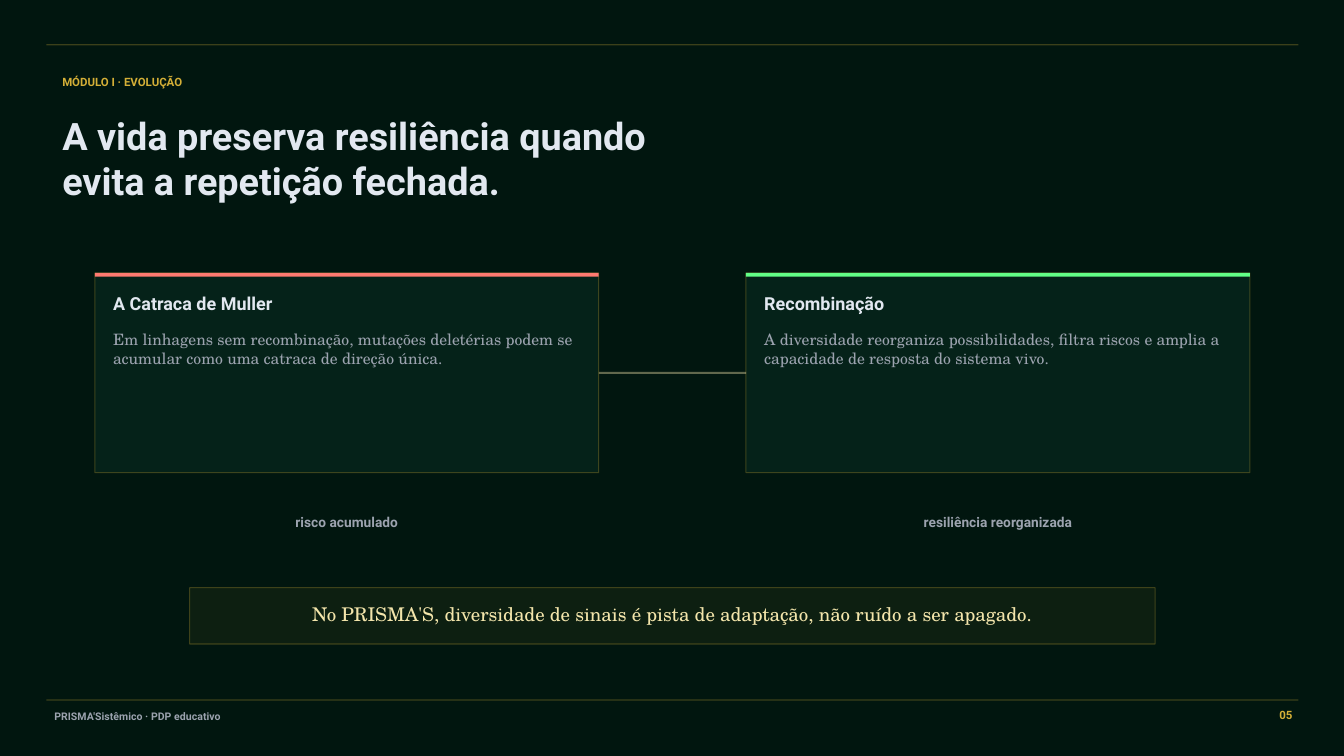
from dataclasses import dataclass

import lxml.etree
import pptx
import pptx.dml.color
import pptx.enum.shapes
import pptx.enum.text
import pptx.oxml.ns
import pptx.util

Cm = pptx.util.Cm
Align = pptx.enum.text.PP_ALIGN
qn = pptx.oxml.ns.qn

SANS = "Roboto"
SERIF = "TeX Gyre Schola"
NIGHT = "01160F"
PANEL = "08291F"
GOLD = "D4AF37"
CREAM = "F3E5AB"
WHITE = "E2E8F0"
GREY = "9CA3AF"

CARD_TOP, CARD_WIDTH, CARD_HEIGHT = 6.88, 12.7, 5.03
CARD_PADDING = 0.46
CAPTION_WIDTH = 10.06
RULE_LEFT, RULE_RIGHT = 1.17, 32.72


@dataclass(frozen=True)
class Card:
    left: float
    accent: str
    heading: str
    body: str
    caption: str


CARDS = [
    Card(2.39, "FF7A70", "A Catraca de Muller",
         "Em linhagens sem recombinação, mutações deletérias podem se acumular "
         "como uma catraca de direção única.",
         "risco acumulado"),
    Card(18.8, "62FF87", "Recombinação",
         "A diversidade reorganiza possibilidades, filtra riscos e amplia a "
         "capacidade de resposta do sistema vivo.",
         "resiliência reorganizada"),
]


def paint(fill, color: str, opacity: int = 100) -> None:
    fill.solid()
    fill.fore_color.rgb = pptx.dml.color.RGBColor.from_string(color)
    if opacity < 100:
        for tint in fill._xPr.iter(qn("a:srgbClr")):
            lxml.etree.SubElement(tint, qn("a:alpha"), val=str(opacity * 1000))


def add_text(slide, text: str, left: float, top: float, width: float, height: float, *,
             size: float, color: str, font: str = SANS, bold: bool = True,
             align=Align.LEFT) -> None:
    frame = slide.shapes.add_textbox(Cm(left), Cm(top), Cm(width), Cm(height)).text_frame
    frame.word_wrap = True
    frame.margin_left = frame.margin_right = frame.margin_top = frame.margin_bottom = 0
    paragraph = frame.paragraphs[0]
    paragraph.alignment = align
    run = paragraph.add_run()
    run.text = text
    run.font.name = font
    run.font.size = pptx.util.Pt(size)
    run.font.bold = bold
    paint(run.font.fill, color)


def add_panel(slide, left: float, top: float, width: float, height: float,
              color: str, opacity: int = 100, outlined: bool = True):
    panel = slide.shapes.add_shape(pptx.enum.shapes.MSO_SHAPE.RECTANGLE,
                                   Cm(left), Cm(top), Cm(width), Cm(height))
    panel.shadow.inherit = False
    paint(panel.fill, color, opacity)
    if outlined:
        panel.line.width = pptx.util.Pt(0.75)
        paint(panel.line.fill, GOLD, 27)
    else:
        panel.line.fill.background()
    return panel


def add_line(slide, left: float, right: float, y: float,
             color: str, opacity: int, weight: float):
    line = slide.shapes.add_connector(pptx.enum.shapes.MSO_CONNECTOR.STRAIGHT,
                                      Cm(left), Cm(y), Cm(right), Cm(y))
    line.line.width = pptx.util.Pt(weight)
    paint(line.line.fill, color, opacity)
    lxml.etree.SubElement(line._element.spPr, qn("a:effectLst"))
    return line


def add_card(slide, card: Card):
    panel = add_panel(slide, card.left, CARD_TOP, CARD_WIDTH, CARD_HEIGHT, PANEL, 67)
    add_panel(slide, card.left, CARD_TOP, CARD_WIDTH, 0.09, card.accent, outlined=False)
    text_left = card.left + CARD_PADDING
    text_width = CARD_WIDTH - 2 * CARD_PADDING
    add_text(slide, card.heading, text_left, CARD_TOP + 0.49, text_width, 0.69,
             size=12.8, color=WHITE)
    add_text(slide, card.body, text_left, CARD_TOP + 1.43, text_width, 3.28,
             size=11.2, color=GREY, font=SERIF, bold=False)
    add_text(slide, card.caption, card.left + (CARD_WIDTH - CAPTION_WIDTH) / 2, 12.95,
             CAPTION_WIDTH, 0.74, size=9.8, color=GREY, align=Align.CENTER)
    return panel


def main() -> None:
    deck = pptx.Presentation()
    deck.slide_width, deck.slide_height = Cm(33.87), Cm(19.05)
    slide = deck.slides.add_slide(deck.slide_layouts[6])
    paint(slide.background.fill, NIGHT)

    for rule_y in (1.13, 17.64):
        add_line(slide, RULE_LEFT, RULE_RIGHT, rule_y, GOLD, 27, 1)

    add_text(slide, "MÓDULO I · EVOLUÇÃO", 1.57, 1.9, 13.77, 0.58, size=8.2, color=GOLD)
    add_text(slide, "A vida preserva resiliência quando evita a repetição fechada.",
             1.57, 2.84, 15.62, 3.51, size=27, color=WHITE)

    risk, resilience = [add_card(slide, card) for card in CARDS]
    bridge = add_line(slide, CARDS[0].left + CARD_WIDTH, CARDS[1].left,
                      CARD_TOP + CARD_HEIGHT / 2, CREAM, 40, 1.5)
    bridge.begin_connect(risk, 3)
    bridge.end_connect(resilience, 1)

    add_panel(slide, 4.78, 14.81, 24.33, 1.42, GOLD, 6)
    add_text(slide, "No PRISMA'S, diversidade de sinais é pista de adaptação, "
             "não ruído a ser apagado.", 5.56, 15.19, 22.76, 0.64,
             size=13.5, color=CREAM, font=SERIF, bold=False, align=Align.CENTER)

    add_text(slide, "PRISMA'Sistêmico · PDP educativo", 1.37, 17.88, 13.77, 0.48,
             size=7.5, color=GREY)
    add_text(slide, "05", 31.5, 17.83, 1.07, 0.48, size=8.2, color=GOLD, align=Align.RIGHT)

    deck.save("out.pptx")


if __name__ == "__main__":
    main()
